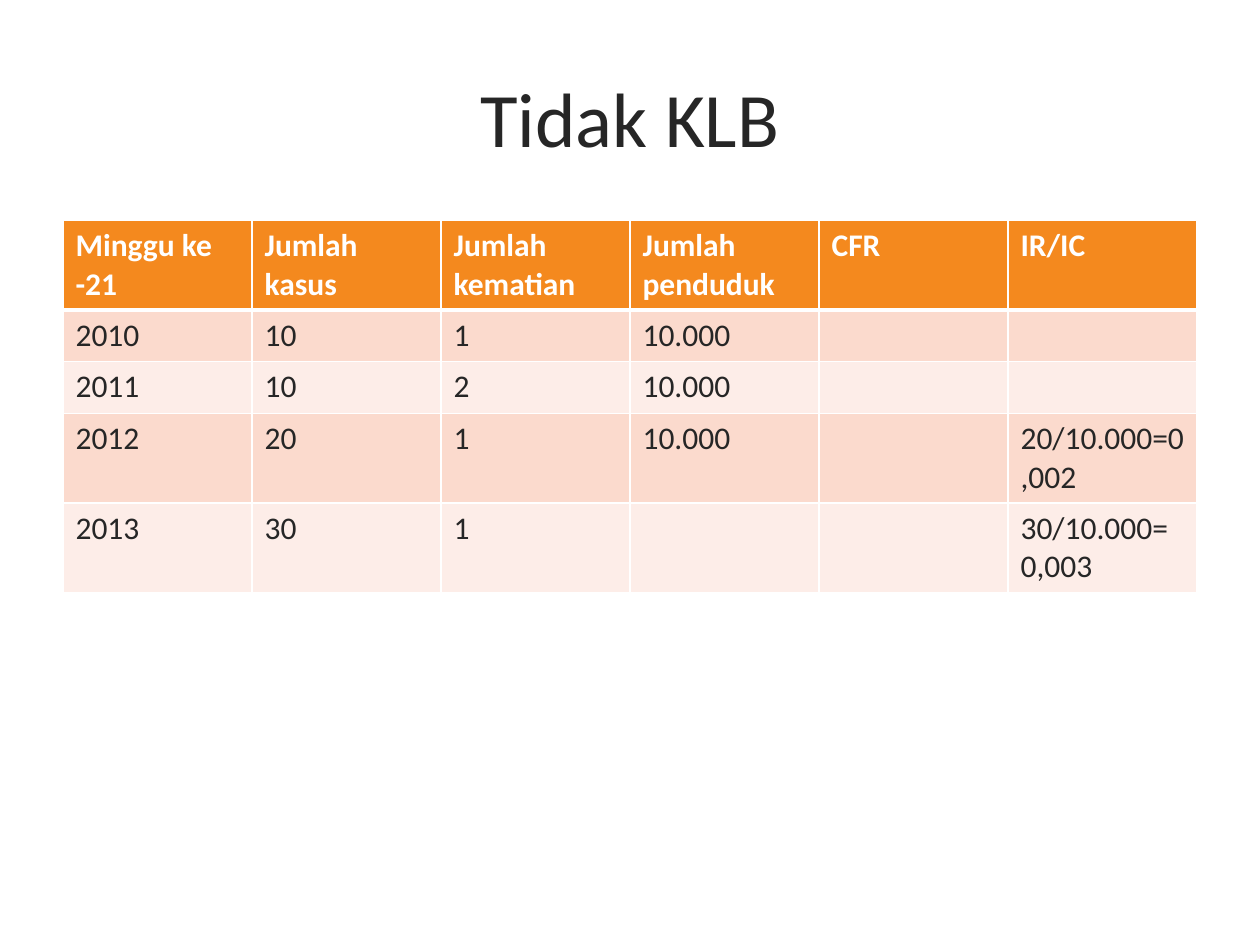
import lxml.etree
import pptx
import pptx.dml.color
import pptx.enum.text
import pptx.oxml.ns
import pptx.util
from pptx.util import Inches

TITLE = "Tidak KLB"
HEADER = ["Minggu ke -21", "Jumlah kasus", "Jumlah kematian",
          "Jumlah penduduk", "CFR", "IR/IC"]
YEARS = [
    ["2010", "10", "1", "10.000", "", ""],
    ["2011", "10", "2", "10.000", "", ""],
    ["2012", "20", "1", "10.000", "", "20/10.000=0,002"],
    ["2013", "30", "1", "", "", "30/10.000=\n0,003"],
]
COLORS = {"text": "262626", "white": "FFFFFF", "header": "F4891E",
          "odd": "FBDACD", "even": "FDEDE8"}
FONT = "Calibri"
COLUMN_WIDTH, ROW_HEIGHT = 1.5, 0.41


def rgb(name):
    return pptx.dml.color.RGBColor.from_string(COLORS[name])


def style_font(paragraph, size, color, bold=False):
    font = paragraph.font
    font.name, font.size, font.bold = FONT, pptx.util.Pt(size), bold
    font.color.rgb = rgb(color)


def add_border(cell, side, points):
    """Draw a white border on one side of a cell: L, R, T or B."""
    qn = pptx.oxml.ns.qn
    line = lxml.etree.SubElement(cell._tc.get_or_add_tcPr(), qn(f"a:ln{side}"),
                                 w=str(pptx.util.Pt(points)))
    fill = lxml.etree.SubElement(line, qn("a:solidFill"))
    lxml.etree.SubElement(fill, qn("a:srgbClr"), val=COLORS["white"])


def fill_cell(cell, text, row):
    is_header = row == 0
    cell.text_frame.text = text
    for paragraph in cell.text_frame.paragraphs:
        style_font(paragraph, 18, "white" if is_header else "text", is_header)
    for side in "LRTB":
        thick = (is_header and side == "B") or (row == 1 and side == "T")
        add_border(cell, side, 3 if thick else 1)
    cell.fill.solid()
    band = "odd" if row % 2 else "even"
    cell.fill.fore_color.rgb = rgb("header" if is_header else band)


def main():
    deck = pptx.Presentation()
    deck.slide_width, deck.slide_height = Inches(10), Inches(7.5)
    slide = deck.slides.add_slide(deck.slide_layouts[5])

    title = slide.shapes.title
    title.left, title.top = Inches(0.5), Inches(0.3)
    title.width, title.height = Inches(9), Inches(1.25)
    title.text_frame.text = TITLE
    title.text_frame.vertical_anchor = pptx.enum.text.MSO_ANCHOR.MIDDLE
    heading = title.text_frame.paragraphs[0]
    heading.alignment = pptx.enum.text.PP_ALIGN.CENTER
    style_font(heading, 44, "text")

    rows = [HEADER] + YEARS
    cases = slide.shapes.add_table(
        len(rows), len(HEADER), Inches(0.5), Inches(1.75),
        Inches(COLUMN_WIDTH * len(HEADER)), Inches(ROW_HEIGHT * len(rows))).table
    for r, values in enumerate(rows):
        for c, text in enumerate(values):
            fill_cell(cases.cell(r, c), text, r)

    deck.save("out.pptx")


if __name__ == "__main__":
    main()
